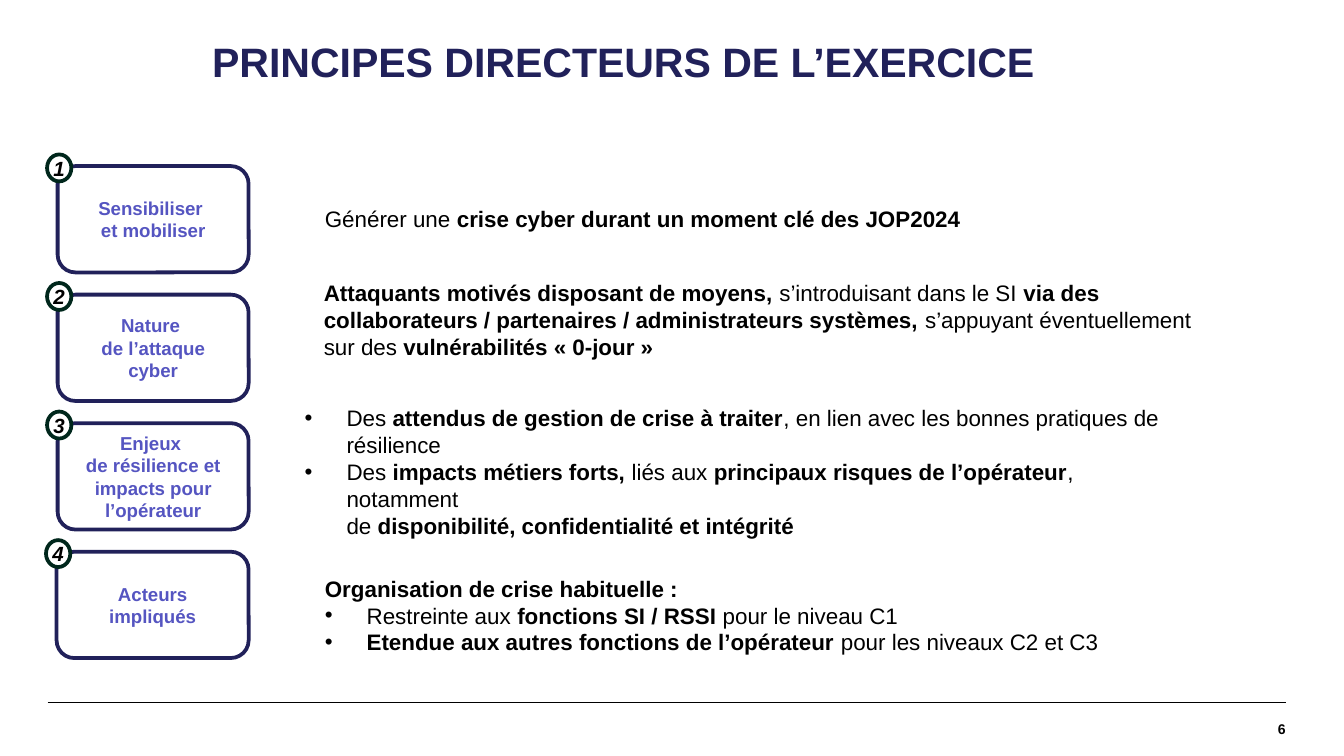
from dataclasses import dataclass

import pptx
import pptx.dml.color
import pptx.enum.shapes
import pptx.enum.text
import pptx.oxml.ns
import pptx.util
from lxml import etree

Cm, Pt = pptx.util.Cm, pptx.util.Pt
SHAPE = pptx.enum.shapes.MSO_SHAPE
ALIGN = pptx.enum.text.PP_ALIGN
ANCHOR = pptx.enum.text.MSO_ANCHOR
qn = pptx.oxml.ns.qn

NAVY, VIOLET, GREEN = "21215A", "5555C1", "00271C"
BLACK, WHITE = "000000", "FFFFFF"
FONT = "Arial"
BULLET = "• "  # marks a bulleted paragraph


@dataclass
class Principle:
    label: list[str]
    left: float  # label box, cm
    text: list[str]  # **bold** parts, \n for a line break
    text_at: tuple[float, float, float, float]


PRINCIPLES = [
    Principle(["Sensibiliser ", "et mobiliser"], 1.09,
              ["Générer une **crise cyber durant un moment clé des JOP2024**"],
              (5.89, 3.76, 25.4, 0.76)),
    Principle(["Nature ", "de l’attaque cyber"], 1.09,
              ["**Attaquants motivés disposant de moyens, **s’introduisant dans le SI "
               "**via des collaborateurs / partenaires / administrateurs systèmes,** "
               "s’appuyant éventuellement sur des **vulnérabilités «\u00a00-jour\u00a0»**"],
              (5.87, 5.16, 17.6, 1.8)),
    Principle(["Enjeux ", "de résilience et impacts pour l’opérateur"], 1.09,
              ["• Des **attendus de gestion de crise à traiter**, en lien avec les "
               "bonnes pratiques de résilience",
               "• Des** impacts métiers forts, **liés aux **principaux risques de "
               "l’opérateur**, notamment \nde **disponibilité, confidentialité et intégrité**"],
              (5.51, 7.52, 16.79, 2.82)),
    Principle(["Acteurs impliqués"], 1.07,
              ["**Organisation de crise habituelle :**",
               "• Restreinte aux** fonctions SI / RSSI **pour le niveau C1",
               "• **Etendue aux autres fonctions de l’opérateur** pour les niveaux C2 et C3"],
              (5.89, 10.74, 22.1, 1.8)),
]
BOX_TOP, BOX_STEP, BOX_RIGHT, BOX_H = 3.14, 2.43, 4.7, 2.01
BADGE_W, BADGE_H, BADGE_DX, BADGE_DY = 0.46, 0.51, -0.2, -0.22


def rgb(color: str) -> pptx.dml.color.RGBColor:
    return pptx.dml.color.RGBColor.from_string(color)


def write(sp, paragraphs: list[str], *, size: float, color: str, bold=False, italic=False,
          align=ALIGN.LEFT, anchor=ANCHOR.TOP, inset=None, wrap=True) -> None:
    """Fill a shape with paragraphs; ** toggles bold, a leading bullet sets a list item."""
    tf = sp.text_frame
    tf.word_wrap = wrap
    tf.vertical_anchor = anchor
    if inset is not None:
        tf.margin_left = tf.margin_right = tf.margin_top = tf.margin_bottom = Cm(inset)
    for i, text in enumerate(paragraphs):
        p = tf.add_paragraph() if i else tf.paragraphs[0]
        p.alignment = align
        if text.startswith(BULLET):
            pPr = p._p.get_or_add_pPr()
            pPr.set("marL", str(Cm(0.79)))
            pPr.set("indent", str(-Cm(0.79)))
            etree.SubElement(pPr, qn("a:buFont")).set("typeface", FONT)
            etree.SubElement(pPr, qn("a:buChar")).set("char", BULLET.strip())
        for j, part in enumerate(text.removeprefix(BULLET).split("**")):
            for k, line in enumerate(part.split("\n")):
                if k:
                    p.add_line_break()
                if line:
                    r = p.add_run()
                    r.text = line
                    r.font.name, r.font.size = FONT, Pt(size)
                    r.font.bold = bold or j % 2 == 1
                    r.font.italic = italic
                    r.font.color.rgb = rgb(color)


def add_text(s, at: tuple[float, float, float, float], paragraphs: list[str], **fmt):
    sp = s.shapes.add_textbox(*map(Cm, at))
    write(sp, paragraphs, **fmt)
    return sp


def add_outlined(s, kind, at: tuple[float, float, float, float], line: str, fill=None):
    sp = s.shapes.add_shape(kind, *map(Cm, at))
    sp.shadow.inherit = False
    if fill:
        sp.fill.solid()
        sp.fill.fore_color.rgb = rgb(fill)
    else:
        sp.fill.background()
    sp.line.color.rgb = rgb(line)
    sp.line.width = Pt(2)
    return sp


def add_principle(s, i: int, item: Principle) -> None:
    top = BOX_TOP + i * BOX_STEP
    box = add_outlined(s, SHAPE.ROUNDED_RECTANGLE,
                       (item.left, top, BOX_RIGHT - item.left, BOX_H), NAVY)
    write(box, item.label, size=10, color=VIOLET, bold=True,
          align=ALIGN.CENTER, anchor=ANCHOR.MIDDLE)
    badge = add_outlined(s, SHAPE.OVAL,
                         (item.left + BADGE_DX, top + BADGE_DY, BADGE_W, BADGE_H), GREEN, WHITE)
    write(badge, [str(i + 1)], size=11, color=BLACK, bold=True, italic=True,
          align=ALIGN.CENTER, anchor=ANCHOR.MIDDLE, inset=0, wrap=False)
    sp = add_text(s, item.text_at, item.text, size=12, color=BLACK)
    sp.text_frame.auto_size = pptx.enum.text.MSO_AUTO_SIZE.SHAPE_TO_FIT_TEXT


def main() -> None:
    prs = pptx.Presentation()
    prs.slide_width, prs.slide_height = Cm(25.4), Cm(14.29)
    s = prs.slides.add_slide(prs.slide_layouts[6])

    # Footer rule and page number
    rule = s.shapes.add_connector(pptx.enum.shapes.MSO_CONNECTOR.STRAIGHT,
                                  Cm(0.9), Cm(13.28), Cm(24.3), Cm(13.28))
    rule.line.color.rgb = rgb(BLACK)
    rule.line.width = Pt(0.8)
    etree.SubElement(rule._element.spPr, qn("a:effectLst"))
    add_text(s, (20.54, 13.28, 3.76, 1), ["6"], size=7.5, color=BLACK, bold=True,
             align=ALIGN.RIGHT, anchor=ANCHOR.MIDDLE, inset=0)

    # Title
    title = add_text(s, (3.76, 0.36, 17.6, 1.7), ["PRINCIPES DIRECTEURS DE L’EXERCICE"],
                     size=22, color=NAVY, bold=True, anchor=ANCHOR.MIDDLE)
    title.text_frame.paragraphs[0].line_spacing = 0.9

    # Numbered principles
    for i, item in enumerate(PRINCIPLES):
        add_principle(s, i, item)

    prs.save("out.pptx")


if __name__ == "__main__":
    main()
